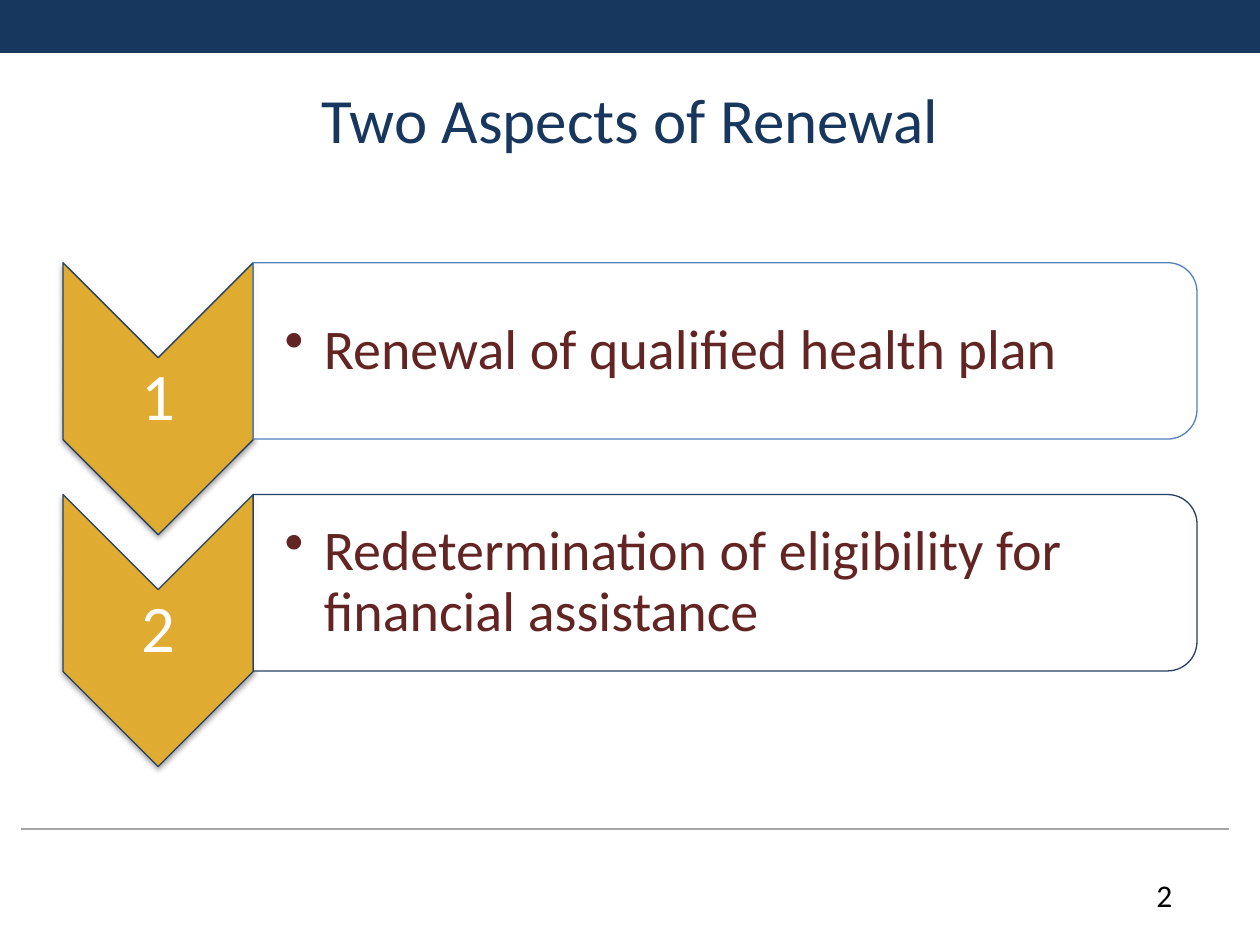
from dataclasses import dataclass

from lxml import etree
from pptx import Presentation
from pptx.dml.color import RGBColor
from pptx.enum.shapes import MSO_CONNECTOR, MSO_SHAPE
from pptx.enum.text import MSO_ANCHOR, PP_ALIGN
from pptx.oxml.ns import qn
from pptx.util import Emu, Inches, Pt

BAR = MSO_SHAPE.RECTANGLE
CHEVRON = MSO_SHAPE.CHEVRON
PANEL = MSO_SHAPE.ROUND_2_SAME_RECTANGLE
STRAIGHT = MSO_CONNECTOR.STRAIGHT
TOP, MIDDLE = MSO_ANCHOR.TOP, MSO_ANCHOR.MIDDLE
LEFT, CENTER = PP_ALIGN.LEFT, PP_ALIGN.CENTER
TITLE_ONLY = 5
COLUMNS, ROWS = 100, 75


@dataclass(frozen=True)
class Theme:
    """Colours and type sizes of the slide."""
    font: str = "Calibri"
    navy: str = "17375E"
    outline: str = "254061"
    blue: str = "4F81BD"
    gold: str = "E0AB31"
    maroon: str = "632523"
    gray: str = "A6A6A6"
    white: str = "FFFFFF"
    black: str = "000000"
    title_size: int = 36
    step_size: int = 38
    body_size: int = 32
    page_size: int = 18
    line_width: float = 0.75


class SlideBuilder:
    """Draws themed elements on one slide, placed in grid columns and rows."""

    def __init__(self, deck, theme):
        self.theme = theme
        self.column = deck.slide_width / COLUMNS
        self.row = deck.slide_height / ROWS
        self.slide = deck.slides.add_slide(deck.slide_layouts[TITLE_ONLY])

    def place(self, left, top, width, height):
        """Turn a grid box into slide lengths."""
        return (Emu(round(left * self.column)), Emu(round(top * self.row)),
                Emu(round(width * self.column)), Emu(round(height * self.row)))

    def set_text(self, frame, text, size, color, align=LEFT, spacing=None):
        """Fill a text frame with one styled paragraph."""
        frame.word_wrap = True
        paragraph = frame.paragraphs[0]
        paragraph.text = text
        paragraph.alignment = align
        paragraph.line_spacing = spacing
        paragraph.font.name = self.theme.font
        paragraph.font.size = Pt(size)
        paragraph.font.color.rgb = RGBColor.from_string(color)

    def title(self, text, box):
        """Move and format the title placeholder."""
        heading = self.slide.shapes.title
        heading.left, heading.top, heading.width, heading.height = self.place(*box)
        heading.text_frame.vertical_anchor = MIDDLE
        self.set_text(heading.text_frame, text, self.theme.title_size,
                      self.theme.navy, CENTER, 0.9)

    def shape(self, kind, box, fill, line=None, turned=False):
        """Add a preset shape, turned a quarter inside its visible box if asked."""
        left, top, width, height = box
        if turned:
            shift = (width - height) / 2
            left, top, width, height = left + shift, top - shift, height, width
        figure = self.slide.shapes.add_shape(kind, *self.place(left, top, width, height))
        figure.rotation = 90 if turned else 0
        figure.shadow.inherit = False
        figure.fill.solid()
        figure.fill.fore_color.rgb = RGBColor.from_string(fill)
        if line:
            figure.line.color.rgb = RGBColor.from_string(line)
            figure.line.width = Pt(self.theme.line_width)
        else:
            figure.line.fill.background()
        return figure

    def rule(self, left, right, row):
        """Add a thin horizontal line."""
        start_x, y, length, _ = self.place(left, row, right - left, 0)
        line = self.slide.shapes.add_connector(STRAIGHT, start_x, y, start_x + length, y)
        line.line.color.rgb = RGBColor.from_string(self.theme.gray)
        line.line.width = Pt(self.theme.line_width)
        etree.SubElement(line._element.spPr, qn("a:effectLst"))

    def text(self, text, box, size, color, align=LEFT, anchor=MIDDLE,
             insets=None, spacing=None, bullet=False):
        """Add a text box, bulleted if asked."""
        frame = self.slide.shapes.add_textbox(*self.place(*box)).text_frame
        frame.vertical_anchor = anchor
        if insets:
            (frame.margin_left, frame.margin_top,
             frame.margin_right, frame.margin_bottom) = map(Inches, insets)
        if bullet:
            properties = frame.paragraphs[0]._p.get_or_add_pPr()
            properties.set("marL", str(Inches(0.31)))
            properties.set("indent", str(-Inches(0.31)))
            etree.SubElement(properties, qn("a:buChar"), char="•")
        self.set_text(frame, text, size, color, align, spacing)

    def chevron(self, number, box):
        """Add a downward chevron with a soft shadow and its step number."""
        theme = self.theme
        arrow = self.shape(CHEVRON, box, theme.gold, theme.outline, turned=True)
        effects = arrow._element.spPr.find(qn("a:effectLst"))
        shadow = etree.SubElement(effects, qn("a:outerShdw"), blurRad=str(Pt(3.1)),
                                  dist=str(Pt(1.8)), dir="5400000", rotWithShape="0")
        tint = etree.SubElement(shadow, qn("a:srgbClr"), val=theme.black)
        etree.SubElement(tint, qn("a:alpha"), val="35000")
        left, top, width, height = box
        self.text(str(number), (left, top + width / 2, width, height - width),
                  theme.step_size, theme.white, CENTER,
                  insets=(0.03,) * 4, spacing=0.9)

    def panel(self, text, box, line):
        """Add a panel rounded on its right side with bulleted text."""
        theme = self.theme
        card = self.shape(PANEL, box, theme.white, line, turned=True)
        tint = card._element.spPr.find(qn("a:solidFill")).find(qn("a:srgbClr"))
        etree.SubElement(tint, qn("a:alpha"), val="90000")
        left, top, width, height = box
        self.text(text, (left, top + 0.7, width - 0.7, height - 1.4),
                  theme.body_size, theme.maroon,
                  insets=(0.25, 0.02, 0.02, 0.02), spacing=0.9, bullet=True)


def main():
    """Build and save the slide."""
    deck = Presentation()
    deck.slide_width, deck.slide_height = Inches(10), Inches(7.5)
    theme = Theme()
    page = SlideBuilder(deck, theme)

    page.shape(BAR, (0, 0, COLUMNS, 4.2), theme.navy)
    page.rule(1.7, 97.5, 65.8)
    page.title("Two Aspects of Renewal", (0, 4.5, COLUMNS, 10.5))

    aspects = [
        ("Renewal of qualified health plan", theme.blue),
        ("Redetermination of eligibility for financial assistance", theme.outline),
    ]
    first_row, pitch = 20.85, 18.4
    for index, (aspect, line) in enumerate(aspects):
        top = first_row + index * pitch
        page.chevron(index + 1, (5, top, 15.1, 21.6))
        page.panel(aspect, (20.1, top, 74.9, 14), line)

    page.text("2", (90.8, 69, 4.2, 4), theme.page_size, theme.black, anchor=TOP)
    deck.save("out.pptx")


if __name__ == "__main__":
    main()
